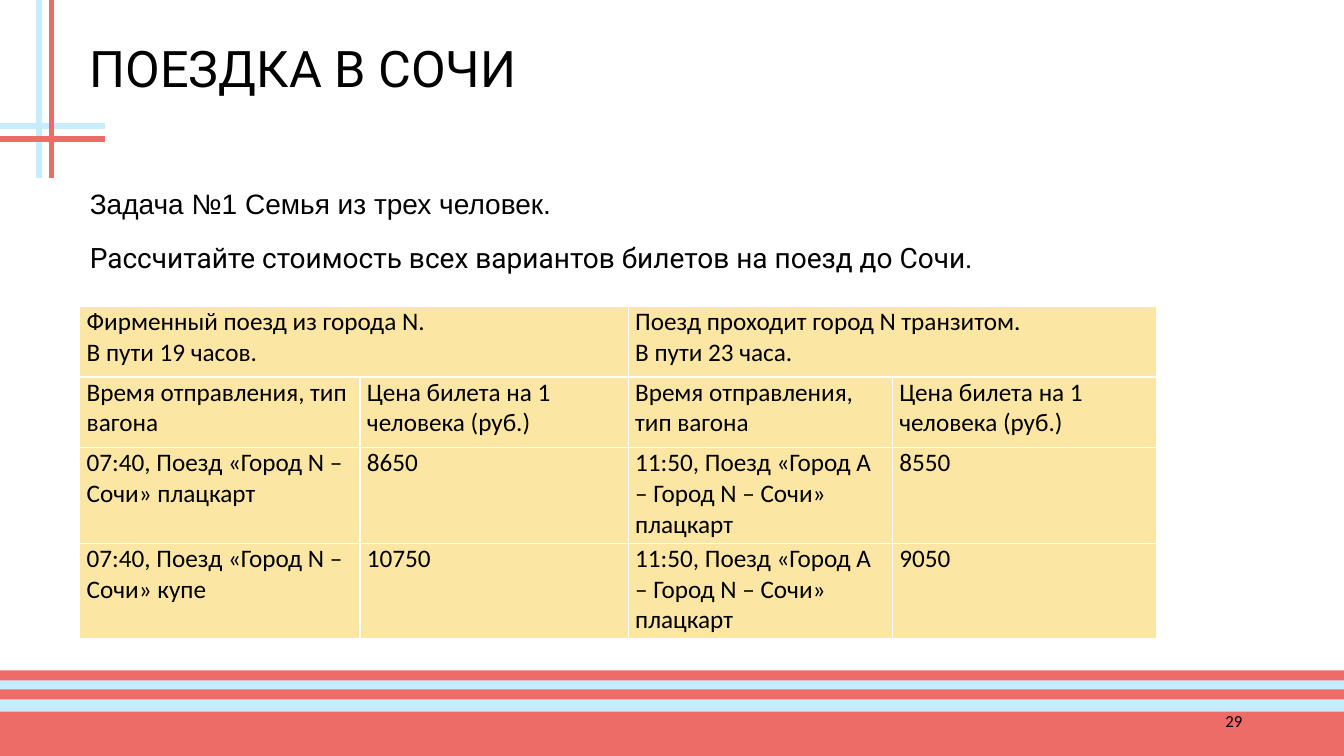
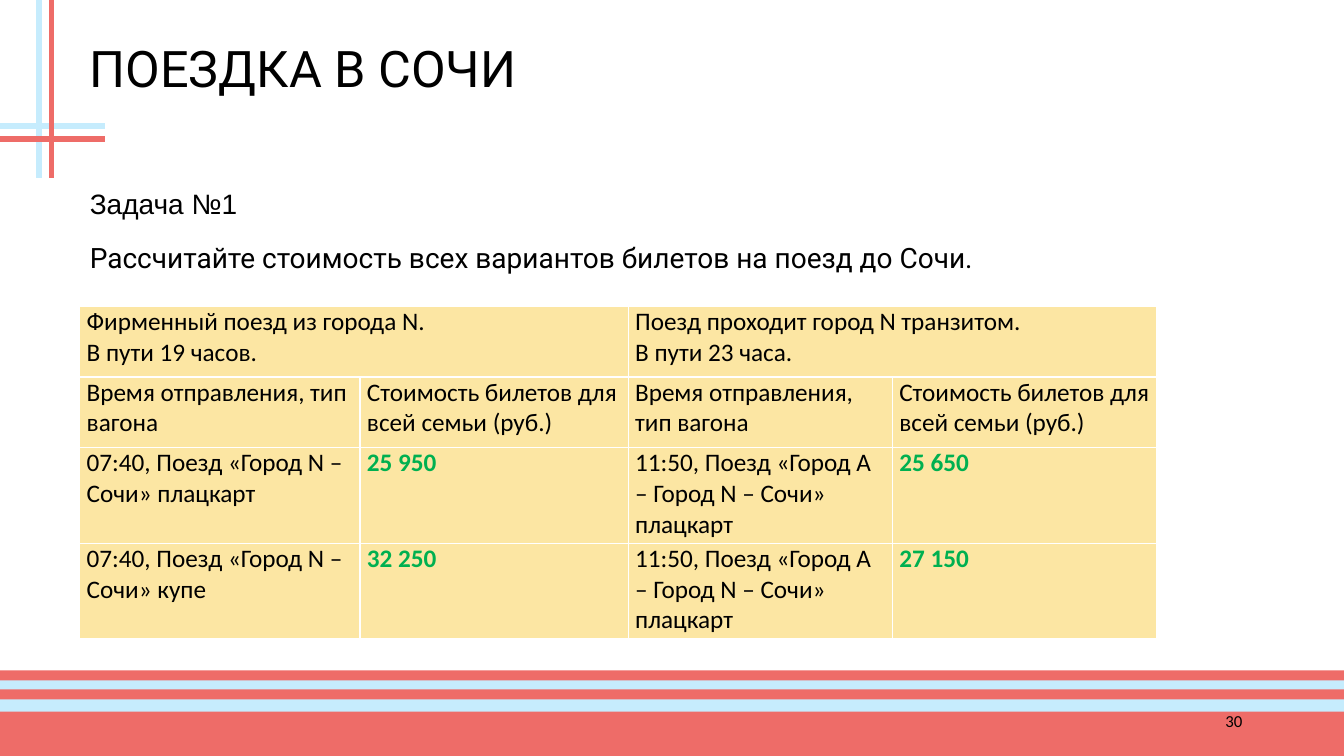
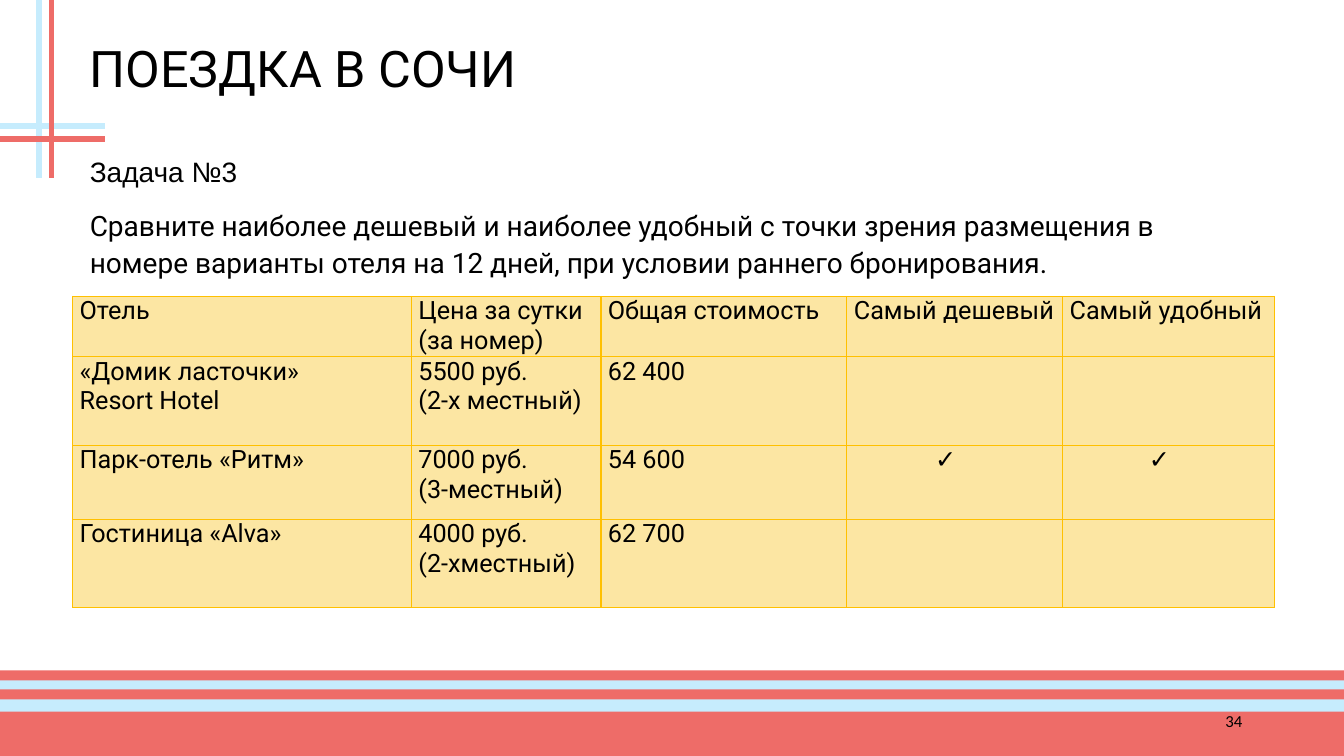
from lxml import etree
from pptx import Presentation
from pptx import util as u
from pptx.dml.color import RGBColor
from pptx.enum import shapes, text
from pptx.oxml import ns

WIDE, HIGH = 13.33, 7.5
LEFT, SPAN = 0.79, 11.63
CORAL, SKY, SAND = "EE6C68", "C6ECFD", "FCE6A3"
BLACK, WHITE, GOLD, GREEN = "000000", "FFFFFF", "FFC000", "00B050"

# top, height, colour
BANDS = [(6.66, 0.84, SKY), (7.06, 0.44, CORAL),
         (6.84, 0.1, CORAL), (6.65, 0.1, CORAL)]
# height of the level rule, place of the upright rule, colour
RULES = [(1.25, 0.39, SKY), (1.38, 0.51, CORAL)]

TITLE = "ПОЕЗДКА В СОЧИ"
TASK = "Рассчитайте стоимость всех вариантов билетов на поезд до Сочи."


def trains(head, prices):
    """Rows of the train table; None joins a cell to the one on its left."""
    trip, via = "07:40, Поезд «Город N – Сочи» ", "11:50, Поезд «Город A – Город N – Сочи» плацкарт"
    when = "Время отправления, тип вагона"
    return [
        ["Фирменный поезд из города N.\nВ пути 19 часов.", None,
         "Поезд проходит город N транзитом.\nВ пути 23 часа.", None],
        [when, head, when, head],
        [trip + "плацкарт", prices[0], via, prices[1]],
        [trip + "купе", prices[2], via, prices[3]],
    ]


HOTELS = [
    ["Отель", "Цена за сутки\n(за номер)", "Общая стоимость", "Самый дешевый", "Самый удобный"],
    ["«Домик ласточки»\nResort Hotel", "5500 руб.\n(2-х местный)", "62 400", "", ""],
    ["Парк-отель «Ритм»", "7000 руб.\n(3-местный)", "54 600", "✓", "✓"],
    ["Гостиница «Alva»", "4000 руб.\n(2-хместный)", "62 700", "", ""],
]

TRAIN = dict(left=LEFT, top=3.04, cols=[2.78, 2.66, 2.62, 2.62],
             rows=[0.7, 0.7, 0.95, 0.95], face="Calibri", edge=WHITE)
HOTEL = dict(left=0.72, top=2.94, cols=[3.36, 1.88, 2.44, 2.14, 2.1],
             rows=[0.58, 0.88, 0.73, 0.88], face="Roboto", edge=GOLD)

SLIDES = [
    dict(num="29", top=1.77, lines=["Задача №1 Семья из трех человек.", TASK], grid=TRAIN,
         cells=trains("Цена билета на 1 человека (руб.)", ["8650", "8550", "10750", "9050"])),
    dict(num="30", top=1.77, lines=["Задача №1", TASK], grid=TRAIN,
         cells=trains("Стоимость билетов для всей семьи (руб.)",
                      ["25 950", "25 650", "32 250", "27 150"]),
         marks=["25 950", "25 650", "32 250", "27 150"]),
    dict(num="34", top=1.45, grid=HOTEL, cells=HOTELS,
         lines=["Задача №3",
                "Сравните наиболее дешевый и наиболее удобный c точки зрения размещения "
                "в номере варианты отеля на 12 дней, при условии раннего бронирования."]),
]


def color(code):
    return RGBColor.from_string(code)


def style(par, size, face, code=BLACK, bold=False):
    font = par.font
    font.size, font.name, font.bold = u.Pt(size), face, bold
    font.color.rgb = color(code)


def place(shape, left, top, width, height):
    shape.left, shape.top = u.Inches(left), u.Inches(top)
    shape.width, shape.height = u.Inches(width), u.Inches(height)


def child(parent, tag, **attrs):
    return etree.SubElement(parent, ns.qn(tag), **attrs)


def decorate(layout, slide):
    """Draw the bands and rules once and move them to the layout."""
    parts = []
    for top, height, code in BANDS:
        band = slide.shapes.add_shape(shapes.MSO_SHAPE.RECTANGLE, 0, u.Inches(top),
                                      u.Inches(WIDE), u.Inches(height))
        band.shadow.inherit = False
        band.fill.solid()
        band.fill.fore_color.rgb = color(code)
        band.line.fill.background()
        parts.append(band)
    for level, across, code in RULES:
        for ends in [(0, level, 1.04, level), (across, 0, across, 1.77)]:
            rule = slide.shapes.add_connector(shapes.MSO_CONNECTOR.STRAIGHT,
                                              *[u.Inches(n) for n in ends])
            rule.line.color.rgb = color(code)
            rule.line.width = u.Pt(4)
            child(rule.element.spPr, "a:effectLst")
            parts.append(rule)
    for spot, part in enumerate(parts, 2):
        layout.shapes.element.insert(spot, part.element)


def border(cell, code):
    props = cell._tc.get_or_add_tcPr()
    for spot, side in enumerate("LRTB"):
        line = etree.Element(ns.qn("a:ln" + side), w=str(u.Pt(1)))
        child(child(line, "a:solidFill"), "a:srgbClr", val=code)
        props.insert(spot, line)


def add_grid(slide, cells, left, top, cols, rows, face, edge, marks=()):
    frame = slide.shapes.add_table(len(rows), len(cols), u.Inches(left), u.Inches(top),
                                   u.Inches(sum(cols)), u.Inches(sum(rows)))
    table = frame.table
    table.first_row = table.horz_banding = False
    for col, width in zip(table.columns, cols):
        col.width = u.Inches(width)
    for row, height in zip(table.rows, rows):
        row.height = u.Inches(height)
    for r, line in enumerate(cells):
        for c, words in enumerate(line):
            cell = table.cell(r, c)
            cell.fill.solid()
            cell.fill.fore_color.rgb = color(SAND)
            border(cell, edge)
            cell.margin_left = cell.margin_right = u.Inches(0.07)
            cell.margin_top = cell.margin_bottom = 0
            if words is None:
                table.cell(r, c - 1).merge(cell)
                continue
            cell.text = words
            bold = words in marks
            for par in cell.text_frame.paragraphs:
                style(par, 18, face, GREEN if bold else BLACK, bold)
                if words == "✓":
                    par.alignment = text.PP_ALIGN.CENTER
                    cell.margin_right = u.Inches(0.25)


def add_head(slide, top, lines):
    head, body = slide.shapes.title, slide.placeholders[1]
    head.text = TITLE
    par = head.text_frame.paragraphs[0]
    par.alignment, par.line_spacing = text.PP_ALIGN.LEFT, 0.9
    style(par, 36, "Roboto")
    place(body, LEFT, top, SPAN, 4.61)
    body.text = "\n".join(lines)
    for par, face in zip(body.text_frame.paragraphs, ["Arial", "Roboto"]):
        props = par._p.get_or_add_pPr()
        props.set("marL", "0")
        props.set("indent", "0")
        par.line_spacing, par.space_before, par.space_after = 1.1, 0, u.Pt(12)
        child(props, "a:buNone")
        style(par, 20, face)
    for shape in (head, body):
        shape.text_frame.vertical_anchor = text.MSO_ANCHOR.TOP
        shape.text_frame.auto_size = text.MSO_AUTO_SIZE.NONE


def add_number(slide, num, face):
    box = slide.shapes.add_textbox(u.Inches(9.42), u.Inches(6.95), u.Inches(3), u.Inches(0.4))
    frame = box.text_frame
    frame.word_wrap, frame.vertical_anchor = True, text.MSO_ANCHOR.MIDDLE
    frame.text = num
    par = frame.paragraphs[0]
    par.alignment = text.PP_ALIGN.RIGHT
    style(par, 12, face)


def main():
    deck = Presentation()
    deck.slide_width, deck.slide_height = u.Inches(WIDE), u.Inches(HIGH)
    layout = deck.slide_layouts[1]
    place(layout.placeholders[0], LEFT, 0.39, SPAN, 0.73)
    for data in SLIDES:
        slide = deck.slides.add_slide(layout)
        if len(deck.slides) == 1:
            decorate(layout, slide)
        add_number(slide, data["num"], "Calibri")
        add_head(slide, data["top"], data["lines"])
        add_grid(slide, data["cells"], marks=data.get("marks", ()), **data["grid"])
    deck.save("out.pptx")


if __name__ == "__main__":
    main()
